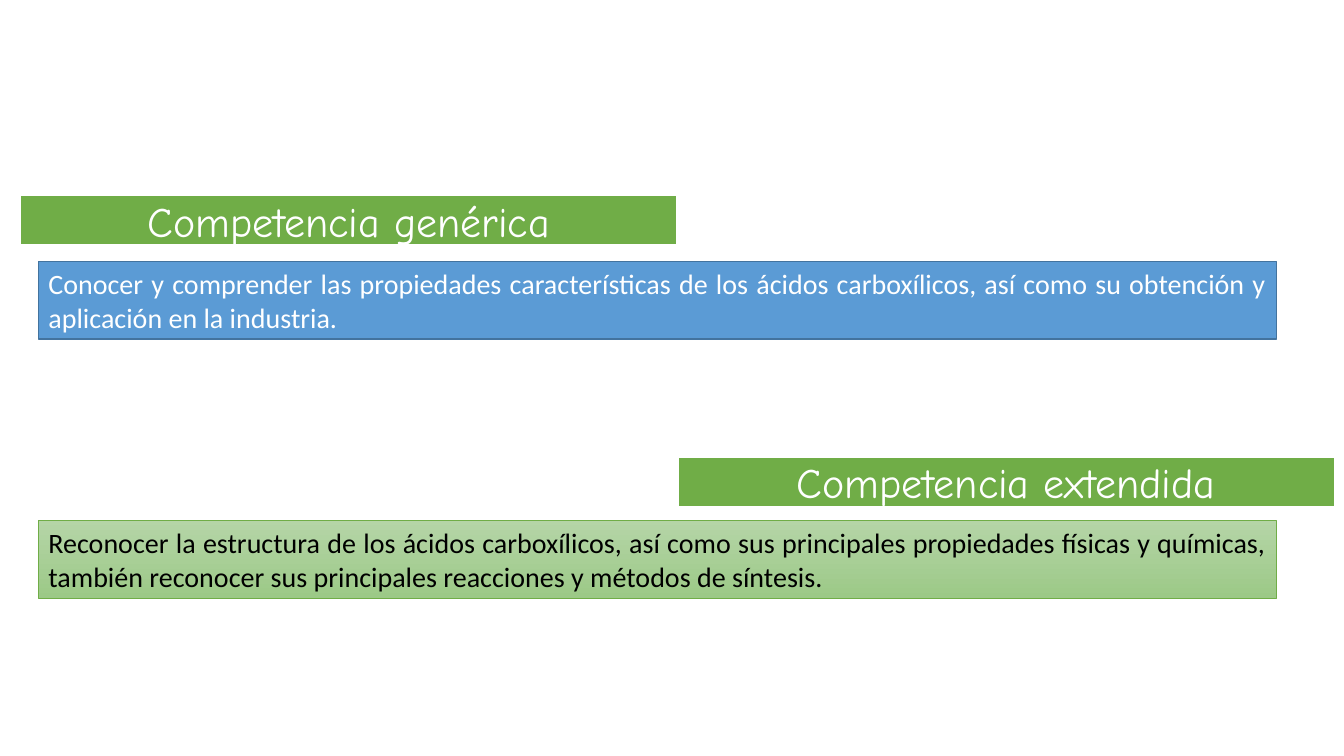
from dataclasses import dataclass

from lxml.etree import SubElement
from pptx import Presentation
from pptx.dml.color import RGBColor as Rgb
from pptx.enum.text import MSO_ANCHOR as Anchor, MSO_AUTO_SIZE as AutoSize, PP_ALIGN as Align
from pptx.oxml.ns import qn
from pptx.shapes.placeholder import SlidePlaceholder
from pptx.slide import Slide
from pptx.util import Inches, Pt

SLIDE_W, SLIDE_H = Inches(13.33), Inches(7.5)
COMPARISON_LAYOUT = 4

# Shares of the slide's width and height, in percent
HEADING_W, HEADING_H = 48.91, 6.67
STATEMENT_X, STATEMENT_W, STATEMENT_H = 2.85, 92.12, 10.27


@dataclass(frozen=True)
class Theme:
    white: str = "FFFFFF"
    black: str = "000000"
    green: str = "70AD47"
    blue: str = "5B9BD5"
    dark_blue: str = "43739E"
    green_fade: tuple[str, str] = ("B5D5A7", "9CC987")
    heading_font: str = "Comic Neue"
    statement_font: str = "Calibri"
    heading_size: int = 30
    statement_size: int = 20


THEME = Theme()


@dataclass(frozen=True)
class Competence:
    heading: str
    heading_x: float
    heading_y: float
    statement: str
    statement_y: float
    fills: tuple[str, ...]
    border: str
    border_width: float
    ink: str
    heading_idx: int
    statement_idx: int


COMPETENCES = (
    Competence(
        "Competencia genérica", 1.5, 25.8,
        "Conocer y comprender las propiedades características de los ácidos carboxílicos, "
        "así como su obtención y aplicación en la industria.",
        34.6, (THEME.blue,), THEME.dark_blue, 1, THEME.white, 1, 2),
    Competence(
        "Competencia extendida", 1.5 + HEADING_W, 60.45,
        "Reconocer la estructura de los ácidos carboxílicos, así como sus principales "
        "propiedades físicas y químicas, también reconocer sus principales reacciones "
        "y métodos de síntesis.",
        68.85, THEME.green_fade, THEME.green, 0.5, THEME.black, 3, 4),
)


def place(panel: SlidePlaceholder, x: float, y: float, width: float, height: float) -> None:
    panel.left, panel.width = (round(SLIDE_W * share / 100) for share in (x, width))
    panel.top, panel.height = (round(SLIDE_H * share / 100) for share in (y, height))


def paint(panel: SlidePlaceholder, fills: tuple[str, ...], border: str, width: float) -> None:
    """Fill with one colour, or fade downwards between two, and outline."""
    if len(fills) == 1:
        panel.fill.solid()
        panel.fill.fore_color.rgb = Rgb.from_string(fills[0])
    else:
        panel.fill.gradient()
        panel.fill.gradient_angle = 270
        for stop, colour in zip(panel.fill.gradient_stops, fills):
            stop.color.rgb = Rgb.from_string(colour)
    panel.line.color.rgb = Rgb.from_string(border)
    panel.line.width = Pt(width)


def write(panel: SlidePlaceholder, text: str, font_name: str, size: int,
          ink: str, align: Align, anchor: Anchor) -> None:
    frame = panel.text_frame
    frame.text = text
    frame.word_wrap = True
    frame.auto_size = AutoSize.NONE
    frame.vertical_anchor = anchor
    paragraph = frame.paragraphs[0]
    paragraph.alignment = align
    paragraph.space_before = Pt(0)
    properties = paragraph._p.get_or_add_pPr()
    properties.set("marL", "0")
    properties.set("indent", "0")
    SubElement(properties, qn("a:buNone"))
    font = paragraph.runs[0].font
    font.name, font.size, font.bold = font_name, Pt(size), False
    font.color.rgb = Rgb.from_string(ink)


def add_heading(slide: Slide, item: Competence) -> None:
    panel = slide.placeholders[item.heading_idx]
    place(panel, item.heading_x, item.heading_y, HEADING_W, HEADING_H)
    paint(panel, (THEME.green,), THEME.white, 1.5)
    write(panel, item.heading, THEME.heading_font, THEME.heading_size,
          THEME.white, Align.CENTER, Anchor.MIDDLE)
    frame = panel.text_frame
    frame.margin_left = frame.margin_right = Inches(0.04)
    frame.margin_top = frame.margin_bottom = Inches(0.04)


def add_statement(slide: Slide, item: Competence) -> None:
    panel = slide.placeholders[item.statement_idx]
    place(panel, STATEMENT_X, item.statement_y, STATEMENT_W, STATEMENT_H)
    paint(panel, item.fills, item.border, item.border_width)
    write(panel, item.statement, THEME.statement_font, THEME.statement_size,
          item.ink, Align.JUSTIFY, Anchor.TOP)


def main() -> None:
    deck = Presentation()
    deck.slide_width, deck.slide_height = SLIDE_W, SLIDE_H
    slide = deck.slides.add_slide(deck.slide_layouts[COMPARISON_LAYOUT])
    unused_title = slide.shapes.title.element
    unused_title.getparent().remove(unused_title)
    for item in COMPETENCES:
        add_heading(slide, item)
        add_statement(slide, item)
    deck.save("out.pptx")


if __name__ == "__main__":
    main()
